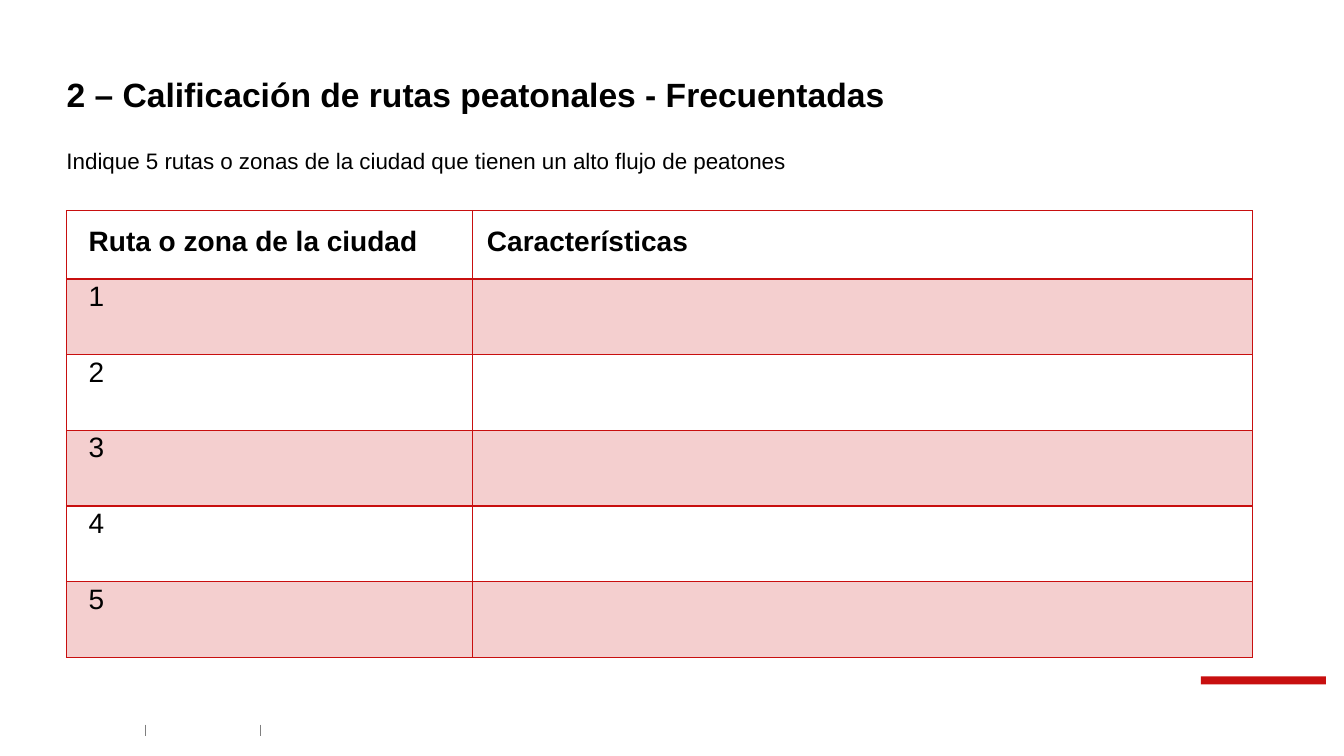
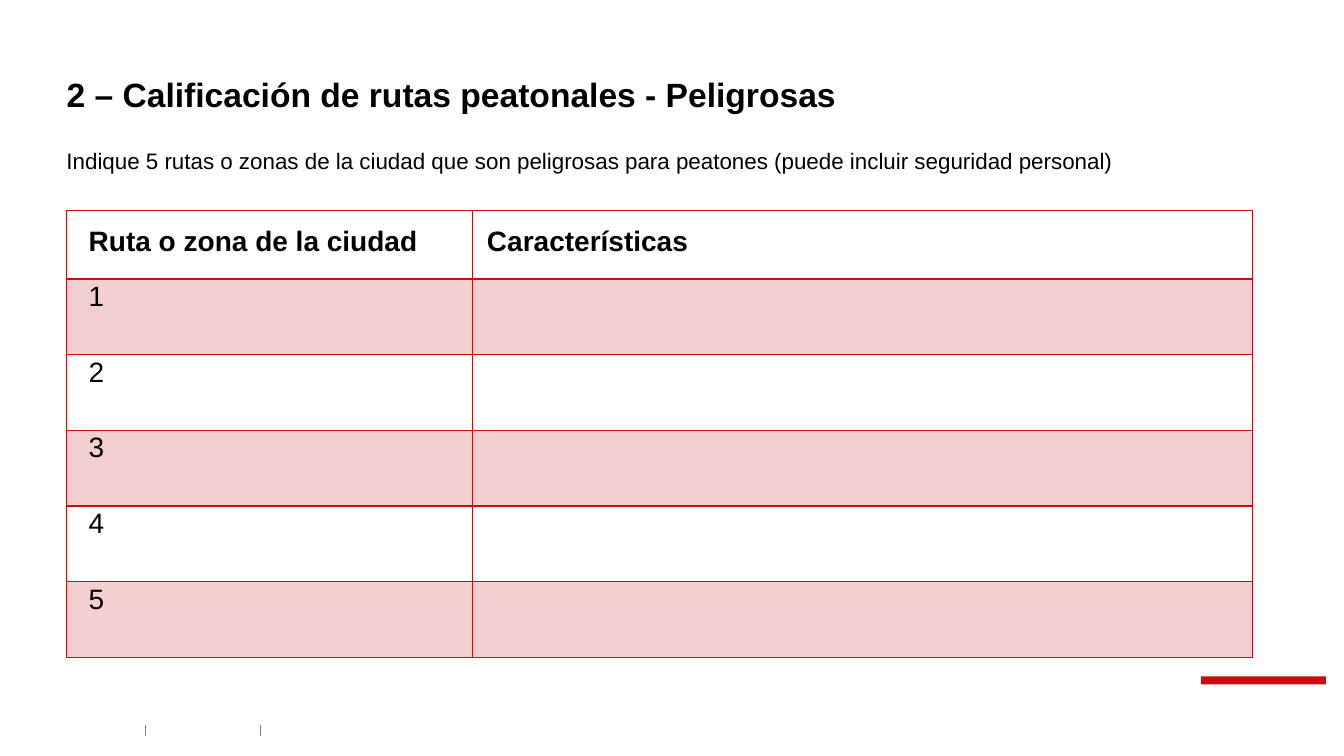
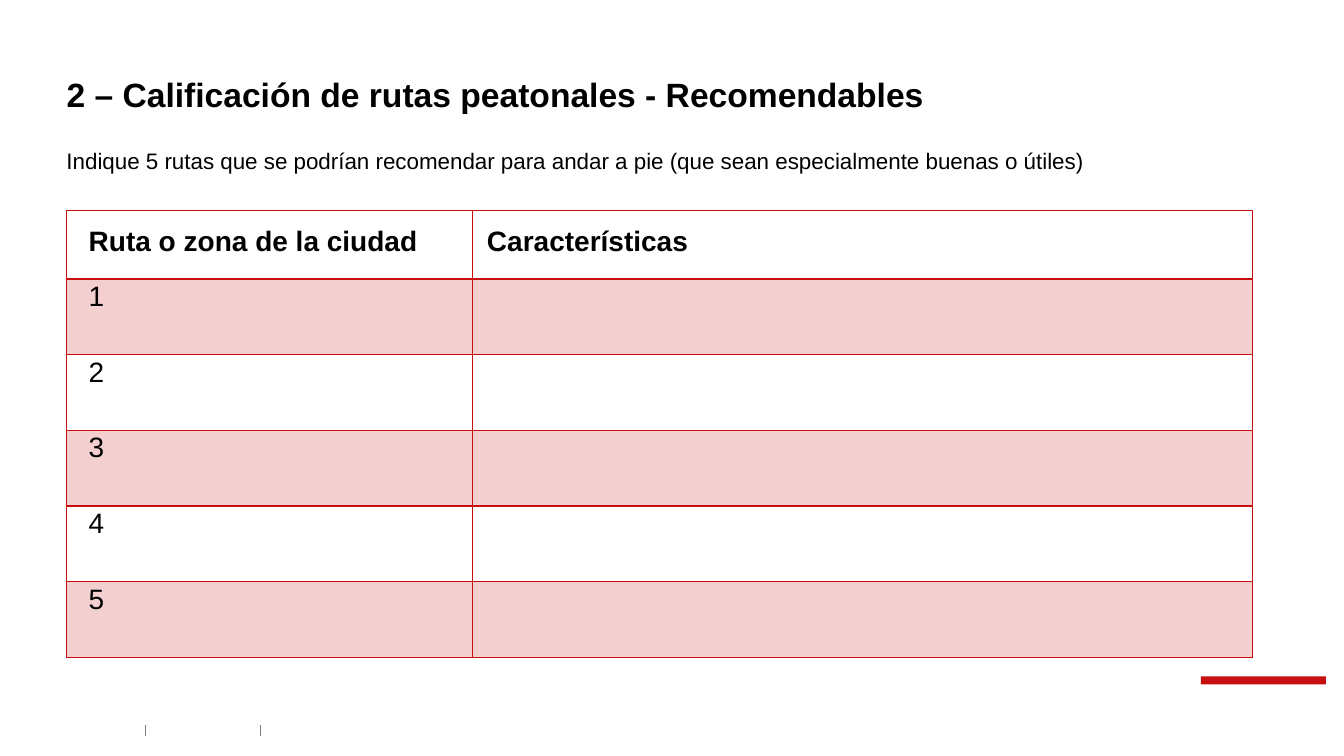
from dataclasses import dataclass

from lxml import etree
from pptx import Presentation
from pptx import util as u
from pptx.dml.color import RGBColor
from pptx.enum import shapes, text
from pptx.oxml.ns import qn

FONT = "Arial"
RED, GRAY, BLACK = "C80F0F", "7F7F7F", "000000"
LEFT = 0.66
COLUMNS = (4.03, 7.73)
CELL_MARGINS = (0.22, 0.14)
HEADERS = ("Ruta o zona de la ciudad", "Características")
HEADER_HEIGHT, ROW_HEIGHT, ROUTES = 0.68, 0.75, 5
FOOTER_TICKS = (1.44, 2.58)


@dataclass
class RouteSlide:
    kind: str
    prompt: str


SLIDES = [
    RouteSlide("Frecuentadas",
               "Indique 5 rutas o zonas de la ciudad que tienen un alto flujo de peatones"),
    RouteSlide("Peligrosas",
               "Indique 5 rutas o zonas de la ciudad que son peligrosas para peatones "
               "(puede incluir seguridad personal)"),
    RouteSlide("Recomendables",
               "Indique 5 rutas que se podrían recomendar para andar a pie "
               "(que sean especialmente buenas o útiles)"),
]


def rgb(color: str) -> RGBColor:
    return RGBColor.from_string(color)


def style(p, size: float, bold: bool, spacing: float) -> None:
    p.alignment = text.PP_ALIGN.LEFT
    p.line_spacing = spacing
    p.font.name, p.font.size, p.font.bold = FONT, u.Pt(size), bold
    p.font.color.rgb = rgb(BLACK)


def place_text(sp, wording: str, box: tuple, size: float, bold: bool, anchor) -> None:
    sp.left, sp.top, sp.width, sp.height = map(u.Inches, box)
    tf = sp.text_frame
    tf.text = wording
    tf.word_wrap = True
    tf.auto_size = text.MSO_AUTO_SIZE.NONE
    tf.vertical_anchor = anchor
    tf.margin_left = tf.margin_top = tf.margin_bottom = 0
    tf.margin_right = u.Inches(0.08)
    style(tf.paragraphs[0], size, bold, 0.9)


def add_footer(s) -> None:
    sp = s.shapes.add_shape(shapes.MSO_SHAPE.RECTANGLE, u.Inches(11.91), u.Inches(6.71),
                            u.Inches(1.24), u.Inches(0.08))
    sp.shadow.inherit = False
    sp.fill.solid()
    sp.fill.fore_color.rgb = rgb(RED)
    sp.line.fill.background()
    for x in FOOTER_TICKS:
        tick = s.shapes.add_connector(shapes.MSO_CONNECTOR.STRAIGHT, u.Inches(x),
                                      u.Inches(7.19), u.Inches(x), u.Inches(7.3))
        tick.line.color.rgb = rgb(GRAY)
        tick.line.width = u.Pt(0.75)
        etree.SubElement(tick._element.spPr, qn("a:effectLst"))


def set_borders(cell, top: float, bottom: float) -> None:
    tcPr = cell._tc.get_or_add_tcPr()
    for side, width in (("L", 1), ("R", 1), ("T", top), ("B", bottom)):
        ln = etree.SubElement(tcPr, qn(f"a:ln{side}"), w=str(u.Pt(width)))
        fill = etree.SubElement(ln, qn("a:solidFill"))
        etree.SubElement(fill, qn("a:srgbClr"), val=RED)


def tint(cell) -> None:
    cell.fill.solid()
    cell.fill.fore_color.rgb = rgb(RED)
    color = cell._tc.tcPr.find(f"{qn('a:solidFill')}/{qn('a:srgbClr')}")
    etree.SubElement(color, qn("a:alpha"), val="20000")


def add_route_table(s) -> None:
    rows = [HEADERS] + [(str(n), "") for n in range(1, ROUTES + 1)]
    table = s.shapes.add_table(len(rows), len(COLUMNS), u.Inches(LEFT), u.Inches(2.09),
                               u.Inches(sum(COLUMNS)),
                               u.Inches(HEADER_HEIGHT + ROUTES * ROW_HEIGHT)).table
    table.horz_banding = False
    for column, width in zip(table.columns, COLUMNS):
        column.width = u.Inches(width)
    for i, row in enumerate(rows):
        header = i == 0
        table.rows[i].height = u.Inches(HEADER_HEIGHT if header else ROW_HEIGHT)
        for j, wording in enumerate(row):
            cell = table.cell(i, j)
            cell.text = wording
            cell.margin_left = u.Inches(CELL_MARGINS[j])
            cell.margin_right = u.Inches(0.14)
            cell.margin_top = cell.margin_bottom = 0
            style(cell.text_frame.paragraphs[0], 20, header, 1.5 if header else 1.07)
            # The rule under the header is heavier
            set_borders(cell, 2 if i == 1 else 1, 2 if header else 1)
            if i % 2:
                tint(cell)
            else:
                cell.fill.background()


def add_route_slide(prs, content: RouteSlide) -> None:
    s = prs.slides.add_slide(prs.slide_layouts[5])
    add_footer(s)
    place_text(s.shapes.title, f"2 – Calificación de rutas peatonales - {content.kind}",
               (LEFT, 0.35, 12.49, 0.79), 24, True, text.MSO_ANCHOR.BOTTOM)
    prompt = s.shapes.add_textbox(0, 0, 0, 0)
    place_text(prompt, content.prompt, (LEFT, 1.49, 11.94, 0.55), 16, False,
               text.MSO_ANCHOR.TOP)
    add_route_table(s)


def main() -> None:
    prs = Presentation()
    prs.slide_width, prs.slide_height = u.Inches(13.33), u.Inches(7.5)
    for content in SLIDES:
        add_route_slide(prs, content)
    prs.save("out.pptx")


if __name__ == "__main__":
    main()
